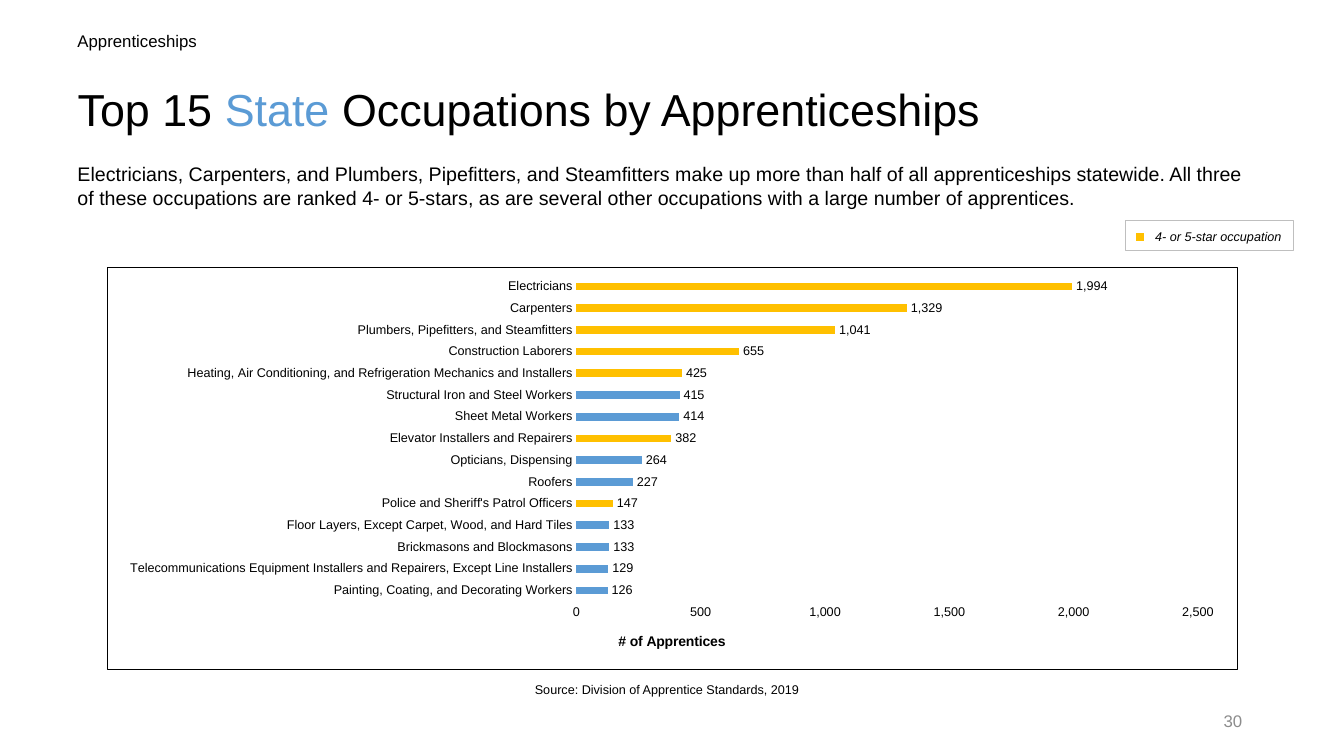
from lxml import etree
from pptx import Presentation
from pptx.chart.data import CategoryChartData
from pptx.dml.color import RGBColor
from pptx.enum.chart import XL_CHART_TYPE, XL_LABEL_POSITION, XL_TICK_MARK
from pptx.enum.shapes import MSO_SHAPE
from pptx.enum.text import MSO_ANCHOR, MSO_AUTO_SIZE, PP_ALIGN
from pptx.oxml import parse_xml
from pptx.util import Inches, Pt

LEFT, CENTER, RIGHT = PP_ALIGN.LEFT, PP_ALIGN.CENTER, PP_ALIGN.RIGHT
TOP, MIDDLE = MSO_ANCHOR.TOP, MSO_ANCHOR.MIDDLE
NO_TICKS = XL_TICK_MARK.NONE
FONT = "Arial"
COLORS = {
    name: RGBColor.from_string(value)
    for name, value in {
        "text": "000000",
        "blue": "5B9BD5",
        "gold": "FFC000",
        "gray": "8C8C8C",
        "frame": "BFBFBF",
        "white": "FFFFFF",
    }.items()
}
CHART_NS = "http://schemas.openxmlformats.org/drawingml/2006/chart"
DRAWING_NS = "http://schemas.openxmlformats.org/drawingml/2006/main"

# Occupation, apprentices, ranked 4 or 5 stars
OCCUPATIONS = [
    ("Electricians", 1994, True),
    ("Carpenters", 1329, True),
    ("Plumbers, Pipefitters, and Steamfitters", 1041, True),
    ("Construction Laborers", 655, True),
    ("Heating, Air Conditioning, and Refrigeration Mechanics and Installers", 425, True),
    ("Structural Iron and Steel Workers", 415, False),
    ("Sheet Metal Workers", 414, False),
    ("Elevator Installers and Repairers", 382, True),
    ("Opticians, Dispensing", 264, False),
    ("Roofers", 227, False),
    ("Police and Sheriff's Patrol Officers", 147, True),
    ("Floor Layers, Except Carpet, Wood, and Hard Tiles", 133, False),
    ("Brickmasons and Blockmasons", 133, False),
    ("Telecommunications Equipment Installers and Repairers, Except Line Installers", 129, False),
    ("Painting, Coating, and Decorating Workers", 126, False),
]

presentation = Presentation()
presentation.slide_width, presentation.slide_height = Inches(13.33), Inches(7.5)
title_only = presentation.slide_layouts[5]
slide = presentation.slides.add_slide(title_only)


def add_text(text, box, size=12, color="text", align=LEFT, anchor=TOP,
             italic=False, wrap=True, shape=None, spacing=None):
    """Write text, or a list of (text, color) runs, into a box."""
    lengths = [Inches(length) for length in box]
    if shape is None:
        shape = slide.shapes.add_textbox(*lengths)
    shape.left, shape.top, shape.width, shape.height = lengths
    frame = shape.text_frame
    frame.auto_size = MSO_AUTO_SIZE.NONE
    frame.word_wrap = wrap
    frame.vertical_anchor = anchor
    paragraph = frame.paragraphs[0]
    paragraph.alignment = align
    paragraph.line_spacing = spacing
    for words, run_color in [(text, color)] if isinstance(text, str) else text:
        run = paragraph.add_run()
        run.text = words
        run.font.name, run.font.size = FONT, Pt(size)
        run.font.italic = italic
        run.font.color.rgb = COLORS[run_color]


def manual_layout(x, y, width=None, height=None):
    """Build a chart layout from fractions of the chart area."""
    layout = etree.Element(f"{{{CHART_NS}}}layout")
    manual = etree.SubElement(layout, f"{{{CHART_NS}}}manualLayout")
    settings = [("xMode", "edge"), ("yMode", "edge"), ("x", x), ("y", y)]
    if width:
        settings = [("layoutTarget", "inner"), *settings, ("w", width), ("h", height)]
    for tag, value in settings:
        etree.SubElement(manual, f"{{{CHART_NS}}}{tag}", val=str(value))
    return parse_xml(etree.tostring(layout))


# Headings
add_text("Apprenticeships", (0.67, 0.26, 1.39, 0.3), wrap=False)
add_text(
    [("Top 15 ", "text"), ("State ", "blue"), ("Occupations by Apprenticeships", "text")],
    (0.67, 0.67, 12, 0.88), size=32, anchor=MIDDLE, spacing=0.9, shape=slide.shapes.title,
)
add_text(
    "Electricians, Carpenters, and Plumbers, Pipefitters, and Steamfitters make up more than "
    "half of all apprenticeships statewide. All three of these occupations are ranked 4- or "
    "5-stars, as are several other occupations with a large number of apprentices.",
    (0.67, 1.56, 11.89, 0.57), size=14,
)

# Key to the gold bars
add_text("4- or 5-star occupation", (11.36, 2.22, 1.46, 0.25), size=9, italic=True, wrap=False)
for box, fill, line, weight in [
    ((11.26, 2.3, 0.1, 0.1), "gold", "white", 1.5),
    ((11.16, 2.19, 1.67, 0.3), None, "frame", 0.75),
]:
    shape = slide.shapes.add_shape(MSO_SHAPE.RECTANGLE, *[Inches(length) for length in box])
    shape.shadow.inherit = False
    if fill:
        shape.fill.solid()
        shape.fill.fore_color.rgb = COLORS[fill]
    else:
        shape.fill.background()
    shape.line.color.rgb = COLORS[line]
    shape.line.width = Pt(weight)

# Bars are drawn from the bottom up, so the smallest comes first
ranking = OCCUPATIONS[::-1]
chart_data = CategoryChartData(number_format="#,##0")
chart_data.categories = [name for name, _, _ in ranking]
chart_data.add_series("Series 1", [count for _, count, _ in ranking])
chart = slide.shapes.add_chart(
    XL_CHART_TYPE.BAR_CLUSTERED, Inches(1.06), Inches(2.65), Inches(11.22), Inches(4), chart_data
).chart
chart.has_legend = False
chart.has_title = False
chart.font.name, chart.font.size = FONT, Pt(10)
chart.font.color.rgb = COLORS["text"]

plot = chart.plots[0]
plot.gap_width = 182
plot.vary_by_categories = False
series = plot.series[0]
series.format.fill.solid()
series.format.fill.fore_color.rgb = COLORS["blue"]
for index, (_, _, high_rank) in enumerate(ranking):
    if high_rank:
        fill = series.points[index].format.fill
        fill.solid()
        fill.fore_color.rgb = COLORS["gold"]

plot.has_data_labels = True
labels = plot.data_labels
labels.show_value = True
labels.position = XL_LABEL_POSITION.OUTSIDE_END
labels.number_format, labels.number_format_is_linked = "#,##0", False

value_axis = chart.value_axis
for axis in (chart.category_axis, value_axis):
    axis.major_tick_mark = axis.minor_tick_mark = NO_TICKS
    axis.has_major_gridlines = False
    axis.format.line.fill.background()
for part in (labels, chart.category_axis.tick_labels, value_axis.tick_labels):
    part.font.name, part.font.size = FONT, Pt(9)
    part.font.color.rgb = COLORS["text"]
value_axis.minimum_scale, value_axis.maximum_scale, value_axis.major_unit = 0, 2500, 500
value_axis.tick_labels.number_format = "#,##0"
value_axis.tick_labels.number_format_is_linked = False

axis_title = value_axis.axis_title
title_paragraph = axis_title.text_frame.paragraphs[0]
title_paragraph.text = "# of Apprentices"
title_font = title_paragraph.runs[0].font
title_font.name, title_font.size, title_font.bold = FONT, Pt(10), True
title_font.color.rgb = COLORS["text"]

# Fixed places for the plot and its axis title, then the chart's frame
chart_space = chart.element
namespaces = {"c": CHART_NS}
plot_area = chart_space.find(".//c:plotArea", namespaces)
for parent, position, layout in [
    (plot_area, 0, manual_layout(0.415, 0.02, 0.55, 0.81)),
    (axis_title.format.line and chart_space.find(".//c:valAx/c:title", namespaces), 1,
     manual_layout(0.45, 0.9)),
]:
    for automatic in parent.findall("c:layout", namespaces):
        parent.remove(automatic)
    parent.insert(position, layout)
chart_space.find("c:chart", namespaces).addnext(parse_xml(
    f'<c:spPr xmlns:c="{CHART_NS}" xmlns:a="{DRAWING_NS}">'
    f'<a:solidFill><a:srgbClr val="{COLORS["white"]}"/></a:solidFill>'
    f'<a:ln w="{Pt(0.75)}"><a:solidFill><a:srgbClr val="{COLORS["text"]}"/></a:solidFill></a:ln>'
    '</c:spPr>'
))

# Footer
add_text("Source: Division of Apprentice Standards, 2019", (3.03, 6.72, 7.17, 0.25),
         size=9, align=CENTER)
add_text("30", (9.42, 6.95, 3, 0.4), color="gray", align=RIGHT, anchor=MIDDLE)

presentation.save("out.pptx")
